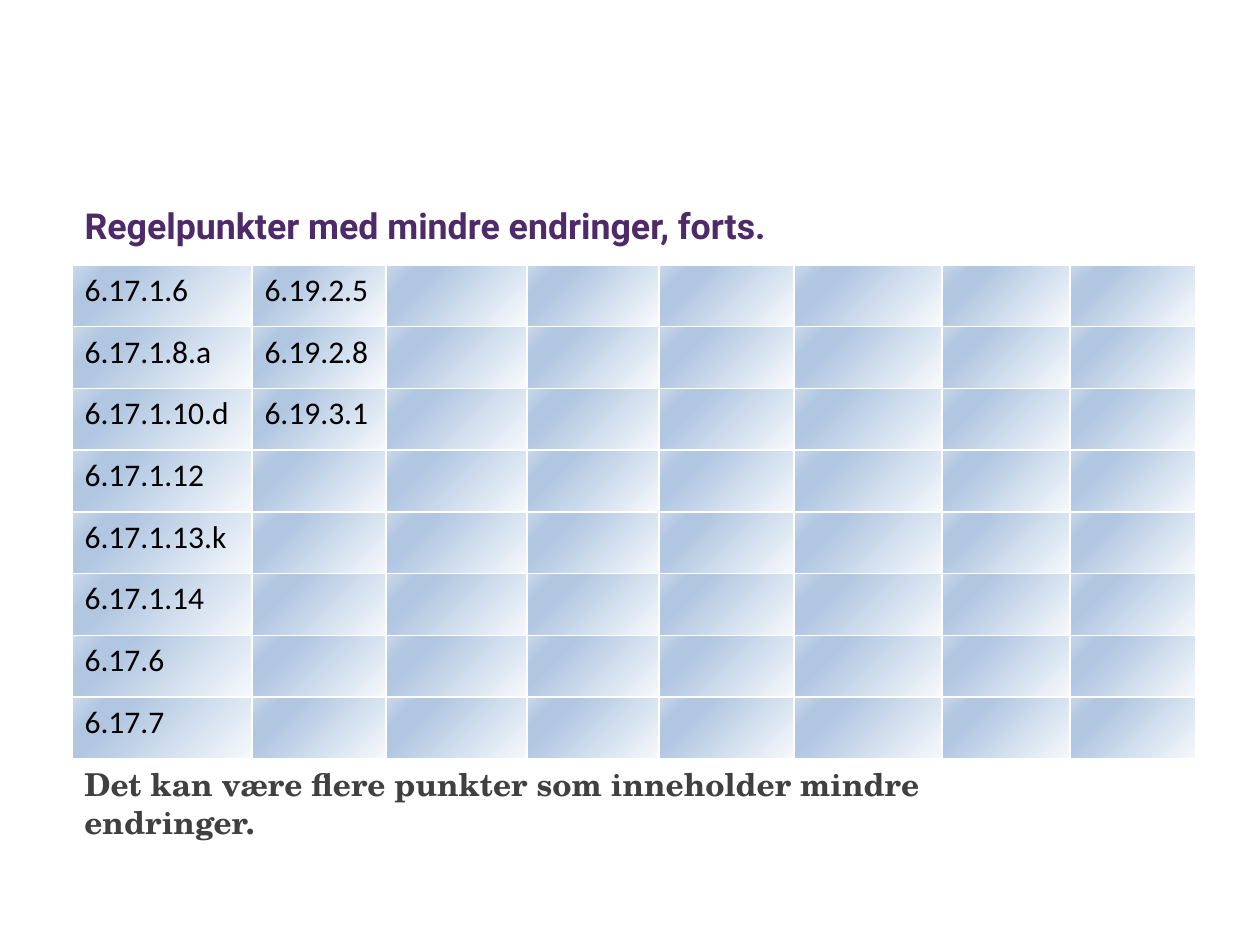
from pptx import Presentation
from pptx.dml.color import RGBColor
from pptx.enum.text import MSO_ANCHOR, PP_ALIGN
from pptx.oxml import parse_xml
from pptx.oxml.ns import nsdecls
from pptx.util import Emu, Pt

PX = 914400 / 126
PURPLE = RGBColor(0x4E, 0x2A, 0x68)
DARK_GREY = RGBColor(0x40, 0x40, 0x40)
BLACK = RGBColor(0, 0, 0)
PALE_BLUE = RGBColor(0xF6, 0xF9, 0xFC)
MID_BLUE = RGBColor(0xB0, 0xC6, 0xE1)
LIGHT_BLUE = RGBColor(0xCA, 0xD9, 0xEB)

LEFT = 72
TABLE_TOP, TABLE_HEIGHT = 265, 494
COLUMN_WIDTHS = [180, 134, 141, 132, 135, 148, 128, 126]
ROW_COUNT = 8
RULE_COLUMNS = [
    ["6.17.1.6", "6.17.1.8.a", "6.17.1.10.d", "6.17.1.12",
     "6.17.1.13.k", "6.17.1.14", "6.17.6", "6.17.7"],
    ["6.19.2.5", "6.19.2.8", "6.19.3.1"],
]


def px(length):
    return Emu(round(length * PX))


def add_run(paragraph, text, font_name, size, color, bold):
    run = paragraph.add_run()
    run.text = text
    run.font.name = font_name
    run.font.size = Pt(size)
    run.font.color.rgb = color
    run.font.bold = bold


def format_text(box, text, font_name, size, color, margin_top):
    """Put one bold, left-aligned paragraph at the top of a text shape."""
    frame = box.text_frame
    frame.word_wrap = True
    frame.vertical_anchor = MSO_ANCHOR.TOP
    frame.margin_top = px(margin_top)
    paragraph = frame.paragraphs[0]
    paragraph.alignment = PP_ALIGN.LEFT
    add_run(paragraph, text, font_name, size, color, True)


def add_heading(slide):
    heading = slide.shapes.title
    heading.left, heading.top = px(LEFT), px(195)
    heading.width, heading.height = px(1125), px(50)
    format_text(heading, "Regelpunkter med mindre endringer, forts.",
                "Roboto", 20.4, PURPLE, 9)


def add_remark(slide):
    remark = slide.shapes.add_textbox(px(LEFT), px(759), px(900), px(105))
    format_text(remark, "Det kan være flere punkter som inneholder mindre endringer.",
                "TeX Gyre Schola", 18, DARK_GREY, 6)


def fill_from_corner(cell, first_stop):
    """Fade the cell from pale at the bottom right to blue at the top left."""
    stops = [(first_stop, PALE_BLUE), (74, MID_BLUE), (83, MID_BLUE), (100, LIGHT_BLUE)]
    stop_xml = "".join(
        f'<a:gs pos="{position * 1000}"><a:srgbClr val="{color}"/></a:gs>'
        for position, color in stops)
    cell._tc.get_or_add_tcPr().append(parse_xml(
        f'<a:gradFill {nsdecls("a")} rotWithShape="1"><a:gsLst>{stop_xml}</a:gsLst>'
        '<a:path path="circle"><a:fillToRect l="100000" t="100000"/></a:path>'
        '<a:tileRect r="-100000" b="-100000"/></a:gradFill>'))


def add_rule_table(slide):
    table = slide.shapes.add_table(
        ROW_COUNT, len(COLUMN_WIDTHS), px(LEFT), px(TABLE_TOP),
        px(sum(COLUMN_WIDTHS)), px(TABLE_HEIGHT)).table
    for column, width in zip(table.columns, COLUMN_WIDTHS):
        column.width = px(width)
    for row_index, row in enumerate(table.rows):
        row.height = px(TABLE_HEIGHT / ROW_COUNT)
        for cell in row.cells:
            fill_from_corner(cell, 3 if row_index < 2 else 0)
    for column_index, rules in enumerate(RULE_COLUMNS):
        for row_index, rule in enumerate(rules):
            paragraph = table.cell(row_index, column_index).text_frame.paragraphs[0]
            add_run(paragraph, rule, "Calibri", 18, BLACK, False)


def main():
    presentation = Presentation()
    presentation.slide_width, presentation.slide_height = px(1260), px(945)
    slide = presentation.slides.add_slide(presentation.slide_layouts[5])
    add_heading(slide)
    add_remark(slide)
    add_rule_table(slide)
    presentation.save("out.pptx")


if __name__ == "__main__":
    main()
